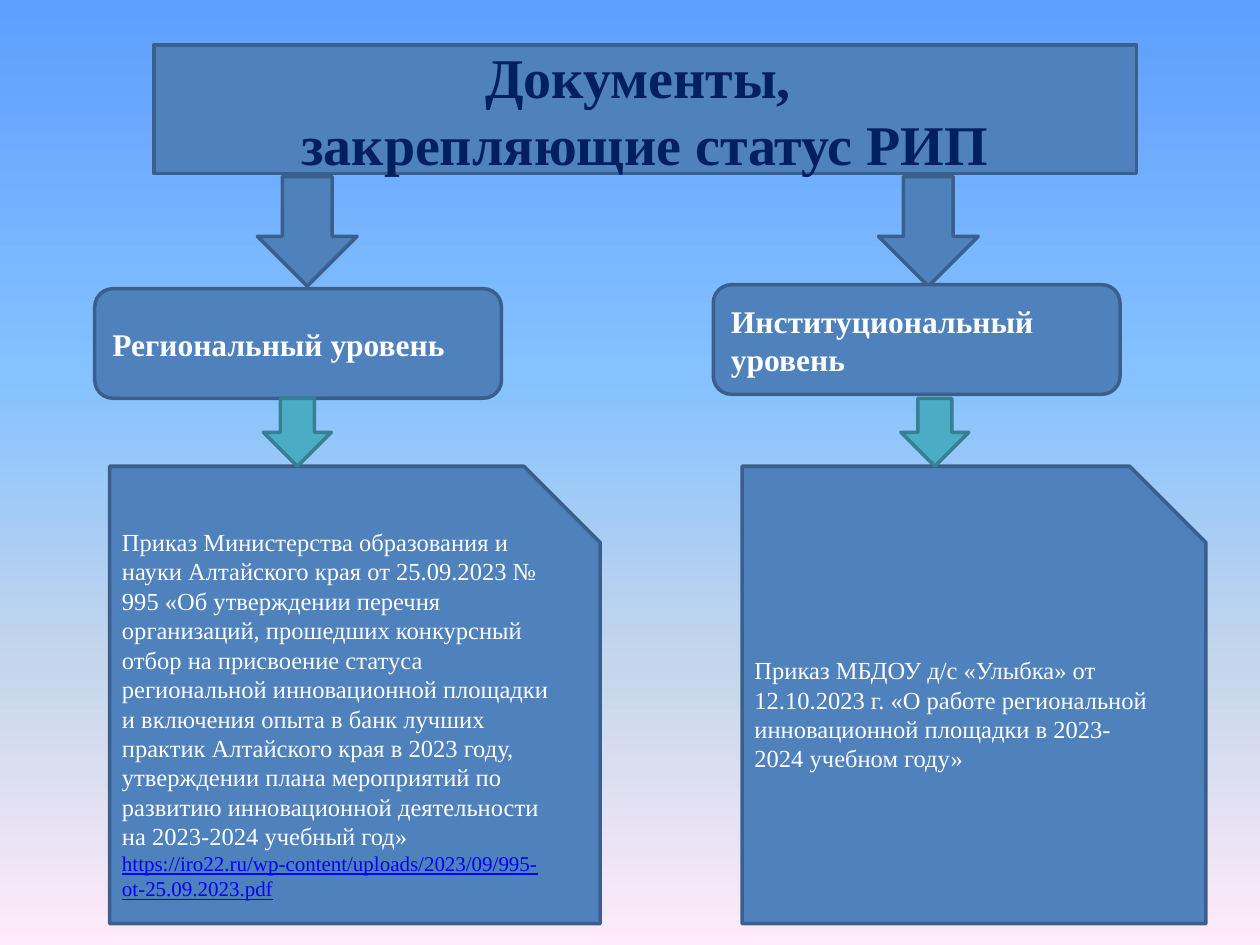
from copy import deepcopy
from dataclasses import dataclass

from pptx import Presentation
from pptx.dml.color import RGBColor
from pptx.enum.shapes import MSO_SHAPE as SHAPE
from pptx.enum.text import MSO_ANCHOR as ANCHOR, MSO_AUTO_SIZE as AUTOSIZE, PP_ALIGN as ALIGN
from pptx.util import Cm, Pt


@dataclass(frozen=True)
class Theme:
    font: str = "Times New Roman"
    blue: str = "4F81BD"
    blue_line: str = "3A5F8C"
    teal: str = "4BACC6"
    teal_line: str = "377F92"
    navy: str = "002060"
    white: str = "FFFFFF"
    link: str = "0000FF"
    backdrop: tuple = ((0, "5E9EFF"), (0.4, "85C2FF"), (0.7, "C4D6EB"), (1, "FFEBFA"))
    title_size: int = 32
    level_size: int = 18
    body_size: int = 14
    link_size: int = 12
    line_width: int = 2


T = Theme()


def rgb(value):
    return RGBColor.from_string(value)


def paint(sp, fill=T.blue, line=T.blue_line):
    sp.fill.solid()
    sp.fill.fore_color.rgb = rgb(fill)
    sp.line.color.rgb = rgb(line)
    sp.line.width = Pt(T.line_width)


def add_block(slide, kind, box, **colors):
    sp = slide.shapes.add_shape(kind, *(Cm(v) for v in box))
    sp.shadow.inherit = False
    paint(sp, **colors)
    return sp


def write(sp, text, size, color=T.white, bold=False, align=ALIGN.LEFT):
    tf = sp.text_frame
    tf.word_wrap = True
    tf.auto_size = AUTOSIZE.NONE
    tf.vertical_anchor = ANCHOR.MIDDLE
    p = tf.paragraphs[0]
    p.text = text
    p.alignment = align
    p.font.name = T.font
    p.font.size = Pt(size)
    p.font.bold = bold
    p.font.color.rgb = rgb(color)
    return p


def set_background(slide):
    fill = slide.background.fill
    fill.gradient()
    fill.gradient_angle = 270
    stops = fill.gradient_stops
    first = stops[0]._gs
    for _ in range(len(T.backdrop) - len(stops)):
        first.addnext(deepcopy(first))
    for stop, (position, color) in zip(fill.gradient_stops, T.backdrop):
        stop.position = position
        stop.color.rgb = rgb(color)


def add_title(slide, box, text):
    title = slide.shapes.title
    title.left, title.top, title.width, title.height = (Cm(v) for v in box)
    paint(title)
    write(title, text, T.title_size, T.navy, bold=True, align=ALIGN.CENTER)


def add_column(slide, box, level, order, link=None, *, arrow_dx, level_dy, small_dx, order_dx):
    """Arrow, level name, small arrow and the order that sets the status."""
    x, y, w, h = box
    order_dy = 5.84
    # Level
    add_block(slide, SHAPE.DOWN_ARROW, (x + arrow_dx, y, 2.01, 2.21))
    sp = add_block(slide, SHAPE.ROUNDED_RECTANGLE, (x, y + level_dy, 8.2, 2.21))
    write(sp, level, T.level_size, bold=True)
    # Order with its link
    sp = add_block(slide, SHAPE.SNIP_1_RECTANGLE,
                   (x + order_dx, y + order_dy, w - order_dx, h - order_dy))
    p = write(sp, order, T.body_size)
    if link:
        r = p.add_run()
        r.text = link
        r.font.size = Pt(T.link_size)
        r.font.underline = True
        r.font.color.rgb = rgb(T.link)
    # Small arrow between them
    add_block(slide, SHAPE.DOWN_ARROW, (x + small_dx, y + order_dy - 1.37, 1.37, 1.37),
              fill=T.teal, line=T.teal_line)


def main():
    prs = Presentation()
    prs.slide_width, prs.slide_height = Cm(25.4), Cm(19.05)
    slide = prs.slides.add_slide(prs.slide_layouts[5])
    set_background(slide)
    add_title(slide, (3.1, 0.91, 19.81, 2.59), "Документы, \vзакрепляющие статус РИП")
    add_column(
        slide, (1.91, 3.56, 10.19, 15.06), "Региональный уровень",
        "Приказ Министерства образования и науки Алтайского края от 25.09.2023 № 995 "
        "«Об утверждении перечня организаций, прошедших конкурсный отбор на присвоение "
        "статуса региональной инновационной площадки и включения опыта в банк лучших "
        "практик Алтайского края в 2023 году, утверждении плана мероприятий по развитию "
        "инновационной деятельности на 2023-2024 учебный год» ",
        "https://iro22.ru/wp-content/uploads/2023/09/995-ot-25.09.2023.pdf",
        arrow_dx=3.28, level_dy=2.26, small_dx=3.4, order_dx=0.3)
    add_column(
        slide, (14.38, 3.56, 9.93, 15.06), "Институциональный уровень",
        "Приказ МБДОУ д/с «Улыбка» от 12.10.2023 г. «О работе региональной "
        "инновационной площадки в 2023-2024 учебном году»",
        arrow_dx=3.33, level_dy=2.18, small_dx=3.78, order_dx=0.58)
    prs.save("out.pptx")


if __name__ == "__main__":
    main()
